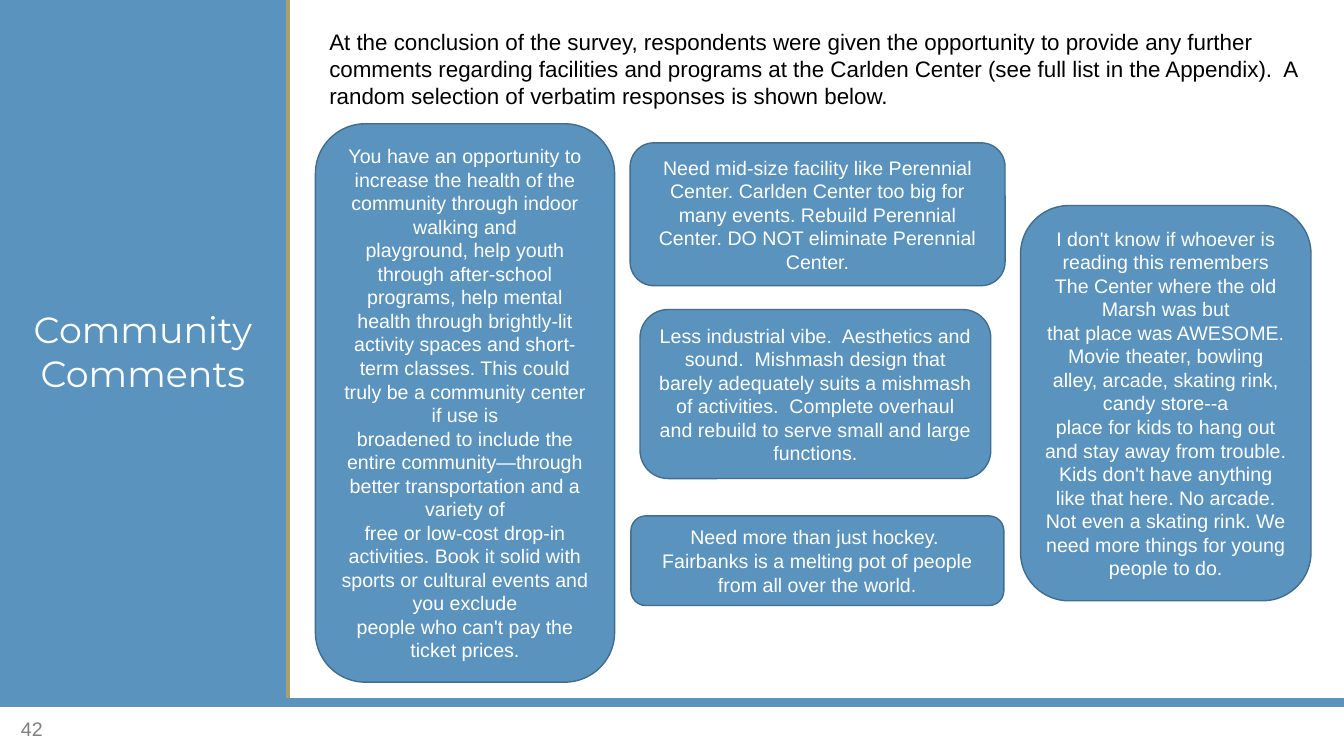
from lxml import etree
from pptx import Presentation
from pptx.dml.color import RGBColor
from pptx.enum.shapes import MSO_CONNECTOR, MSO_SHAPE
from pptx.enum.text import MSO_ANCHOR, PP_ALIGN
from pptx.oxml.ns import qn
from pptx.util import Cm, Pt

RECT, ROUNDED = MSO_SHAPE.RECTANGLE, MSO_SHAPE.ROUNDED_RECTANGLE
STRAIGHT = MSO_CONNECTOR.STRAIGHT
TOP, MIDDLE = MSO_ANCHOR.TOP, MSO_ANCHOR.MIDDLE
LEFT, CENTER = PP_ALIGN.LEFT, PP_ALIGN.CENTER

BLUE = RGBColor(0x5A, 0x93, 0xBE)
DARK_BLUE = RGBColor(0x43, 0x6D, 0x8D)
GOLD = RGBColor(0xA8, 0xA1, 0x6E)
GRAY = RGBColor(0x80, 0x80, 0x80)
BLACK = RGBColor(0, 0, 0)
WHITE = RGBColor(0xFF, 0xFF, 0xFF)

TITLE = {"name": "Montserrat", "size": Pt(26), "color": WHITE}
INTRO = {"name": "Arial", "size": Pt(16), "color": BLACK}
COMMENT = {"name": "Arial", "size": Pt(14), "color": WHITE}
PAGE_NUMBER = {"name": "Arial", "size": Pt(14), "color": GRAY}

SLIDE_W, SLIDE_H = 33.87, 19.05
PANEL_W, PANEL_H = 7.21, 17.7
GOLD_X = 7.26

INTRO_TEXT = (
    "At the conclusion of the survey, respondents were given the opportunity to "
    "provide any further comments regarding facilities and programs at the Carlden "
    "Center (see full list in the Appendix).  A random selection of verbatim "
    "responses is shown below.")

# Each comment: (left, top, width, height) in cm, then its paragraphs
COMMENTS = [
    ((7.95, 3.12, 7.54, 14.07), [
        "You have an opportunity to increase the health of the community through "
        "indoor walking and",
        "playground, help youth through after-school programs, help mental health "
        "through brightly-lit",
        "activity spaces and short-term classes. This could truly be a community "
        "center if use is",
        "broadened to include the entire community—through better transportation "
        "and a variety of",
        "free or low-cost drop-in activities. Book it solid with sports or cultural "
        "events and you exclude",
        "people who can't pay the ticket prices."]),
    ((15.88, 3.6, 9.45, 3.6), [
        "Need mid-size facility like Perennial Center. Carlden Center too big for "
        "many events. Rebuild Perennial Center. DO NOT eliminate Perennial "
        "Center."]),
    ((16.13, 7.8, 8.84, 4.26), [
        "Less industrial vibe.  Aesthetics and sound.  Mishmash design that barely "
        "adequately suits a mishmash of activities.  Complete overhaul and rebuild "
        "to serve small and large functions."]),
    ((15.9, 13.0, 9.4, 2.26), [
        "Need more than just hockey.  Fairbanks is a melting pot of people from all "
        "over the world."]),
    ((25.72, 5.18, 7.32, 9.96), [
        "I don't know if whoever is reading this remembers The Center where the old "
        "Marsh was but",
        "that place was AWESOME. Movie theater, bowling alley, arcade, skating rink, "
        "candy store--a",
        "place for kids to hang out and stay away from trouble. Kids don't have "
        "anything like that here. No arcade. Not even a skating rink. We need more "
        "things for young people to do."]),
]


class SlideBuilder:
    def __init__(self, s):
        self.s = s

    def fill_text(self, sp, paragraphs, style, align, anchor, space_before=0):
        tf = sp.text_frame
        tf.word_wrap = True
        tf.vertical_anchor = anchor
        for i, text in enumerate(paragraphs):
            p = tf.paragraphs[0] if i == 0 else tf.add_paragraph()
            p.alignment = align
            p.space_before = Pt(space_before)
            r = p.add_run()
            r.text = text
            for key, value in style.items():
                if key == "color":
                    r.font.color.rgb = value
                else:
                    setattr(r.font, key, value)

    def block(self, kind, box, paragraphs, style, outline=None):
        """Add a blue shape with centred text."""
        sp = self.s.shapes.add_shape(kind, *map(Cm, box))
        sp.shadow.inherit = False
        sp.fill.solid()
        sp.fill.fore_color.rgb = BLUE
        if outline is None:
            sp.line.fill.background()
        else:
            sp.line.color.rgb = outline
            sp.line.width = Pt(1)
        self.fill_text(sp, paragraphs, style, CENTER, MIDDLE)

    def text(self, box, text, style, anchor, space_before=0):
        sp = self.s.shapes.add_textbox(*map(Cm, box))
        self.fill_text(sp, [text], style, LEFT, anchor, space_before)

    def line(self, ends, color, width):
        cxn = self.s.shapes.add_connector(STRAIGHT, *map(Cm, ends))
        cxn.line.color.rgb = color
        cxn.line.width = Pt(width)
        etree.SubElement(cxn._element.spPr, qn("a:effectLst"))


def main():
    prs = Presentation()
    prs.slide_width, prs.slide_height = Cm(SLIDE_W), Cm(SLIDE_H)
    b = SlideBuilder(prs.slides.add_slide(prs.slide_layouts[6]))

    b.block(RECT, (0, 0, PANEL_W, PANEL_H), ["Community Comments"], TITLE)
    b.line((GOLD_X, 0, GOLD_X, PANEL_H), GOLD, 3)
    b.line((0, PANEL_H, SLIDE_W, PANEL_H), BLUE, 6)
    b.text((0.28, 17.86, 7.62, 1.02), "42", PAGE_NUMBER, MIDDLE)
    b.text((8.05, 0.58, 25.43, 3.71), INTRO_TEXT, INTRO, TOP, space_before=10)
    for box, paragraphs in COMMENTS:
        b.block(ROUNDED, box, paragraphs, COMMENT, outline=DARK_BLUE)

    prs.save("out.pptx")


if __name__ == "__main__":
    main()
